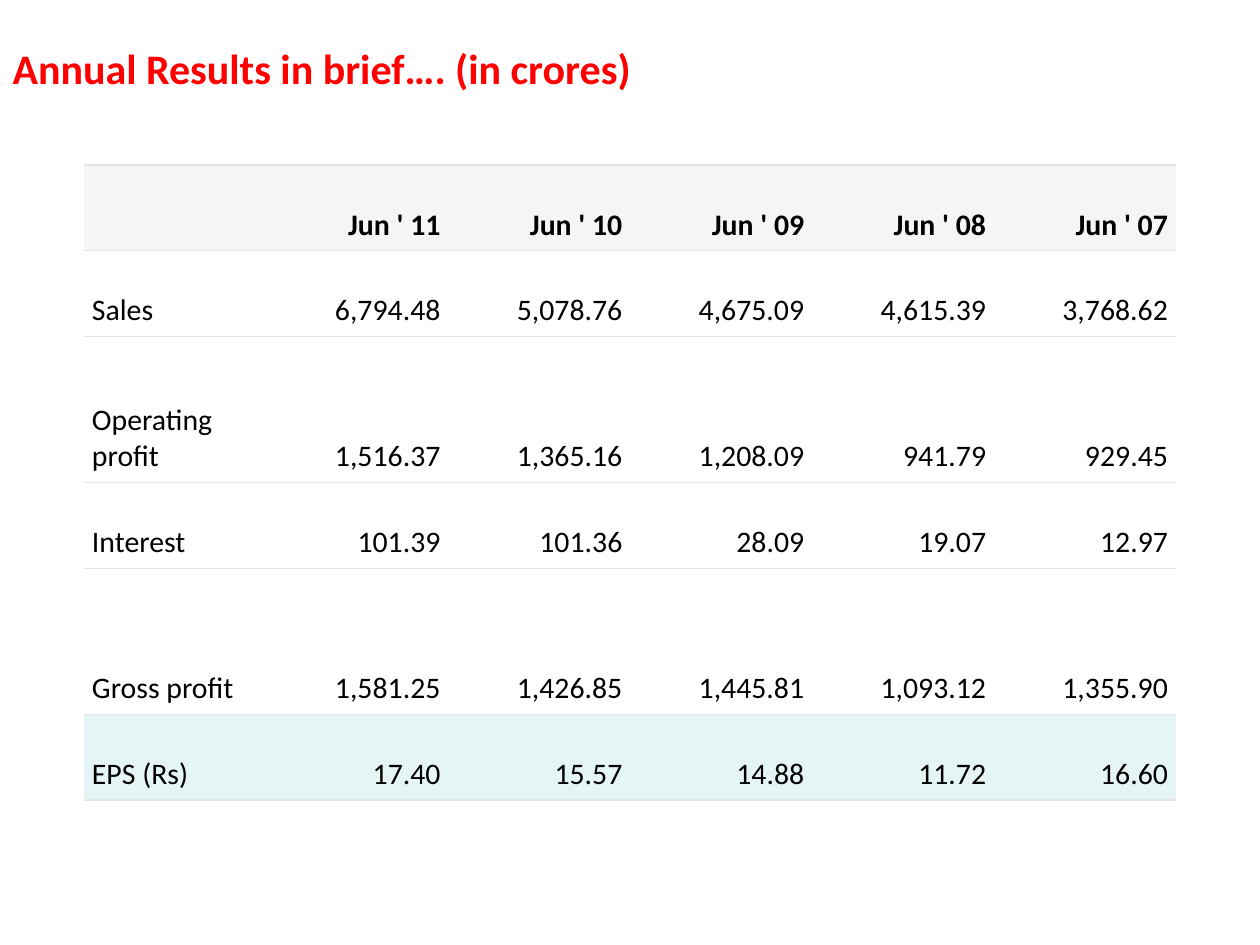
from lxml.etree import SubElement
from pptx import Presentation
from pptx.dml.color import RGBColor
from pptx.enum.text import MSO_ANCHOR, MSO_AUTO_SIZE, PP_ALIGN
from pptx.oxml.ns import qn
from pptx.util import Inches, Pt

# Content
TITLE = "Annual Results in brief…. (in crores)"
RESULTS = [
    ("", "Jun ' 11", "Jun ' 10", "Jun ' 09", "Jun ' 08", "Jun ' 07"),
    ("Sales", "6,794.48", "5,078.76", "4,675.09", "4,615.39", "3,768.62"),
    ("Operating profit", "1,516.37", "1,365.16", "1,208.09", "941.79", "929.45"),
    ("Interest", "101.39", "101.36", "28.09", "19.07", "12.97"),
    ("Gross profit", "1,581.25", "1,426.85", "1,445.81", "1,093.12", "1,355.90"),
    ("EPS (Rs)", "17.40", "15.57", "14.88", "11.72", "16.60"),
]
ROW_HEIGHTS = [0.68, 0.68, 1.16, 0.68, 1.16, 0.68]

# Style
FONT = "Calibri"
RED = RGBColor(0xFF, 0x00, 0x00)
BLACK = RGBColor(0x00, 0x00, 0x00)
WHITE = RGBColor(0xFF, 0xFF, 0xFF)
HEADER_GRAY = RGBColor(0xF5, 0xF5, 0xF5)
EPS_TEAL = RGBColor(0xE5, 0xF5, 0xF5)
RULE_GRAY = RGBColor(0xE5, 0xE5, 0xE5)
ROW_FILLS = [HEADER_GRAY] + [WHITE] * 4 + [EPS_TEAL]
CELL_MARGIN = Inches(0.06)


def style_font(font, size, color, bold):
    font.name = FONT
    font.size = Pt(size)
    font.color.rgb = color
    font.bold = bold


def set_borders(cell):
    """Rule the top and bottom of a cell, leaving its sides open."""
    properties = cell._tc.get_or_add_tcPr()
    for side in ("L", "R", "T", "B"):
        line = SubElement(properties, qn(f"a:ln{side}"), w=str(Pt(0.75)))
        if side in "LR":
            SubElement(line, qn("a:noFill"))
        else:
            fill = SubElement(line, qn("a:solidFill"))
            SubElement(fill, qn("a:srgbClr"), val=str(RULE_GRAY))


deck = Presentation()
deck.slide_width, deck.slide_height = Inches(10), Inches(7.5)
page = deck.slides.add_slide(deck.slide_layouts[5])

# Title
title = page.shapes.title
title.left, title.top = Inches(0), Inches(0.29)
title.width, title.height = Inches(5.83), Inches(0.5)
frame = title.text_frame
frame.text = TITLE
frame.word_wrap = True
frame.auto_size = MSO_AUTO_SIZE.NONE
frame.vertical_anchor = MSO_ANCHOR.TOP
frame.paragraphs[0].alignment = PP_ALIGN.LEFT
style_font(frame.paragraphs[0].font, 24, RED, True)

# Results table
table = page.shapes.add_table(
    len(RESULTS), len(RESULTS[0]),
    Inches(0.67), Inches(1.31), Inches(8.66), Inches(sum(ROW_HEIGHTS)),
).table
table.first_row = table.horz_banding = False

for row_index, values in enumerate(RESULTS):
    table.rows[row_index].height = Inches(ROW_HEIGHTS[row_index])
    for column_index, value in enumerate(values):
        cell = table.cell(row_index, column_index)
        set_borders(cell)
        cell.fill.solid()
        cell.fill.fore_color.rgb = ROW_FILLS[row_index]
        cell.vertical_anchor = MSO_ANCHOR.BOTTOM
        cell.margin_left = cell.margin_right = CELL_MARGIN
        cell.margin_top = cell.margin_bottom = CELL_MARGIN
        cell.text = value
        para = cell.text_frame.paragraphs[0]
        para.alignment = PP_ALIGN.RIGHT if column_index else PP_ALIGN.LEFT
        style_font(para.font, 17, BLACK, row_index == 0)

deck.save("out.pptx")
